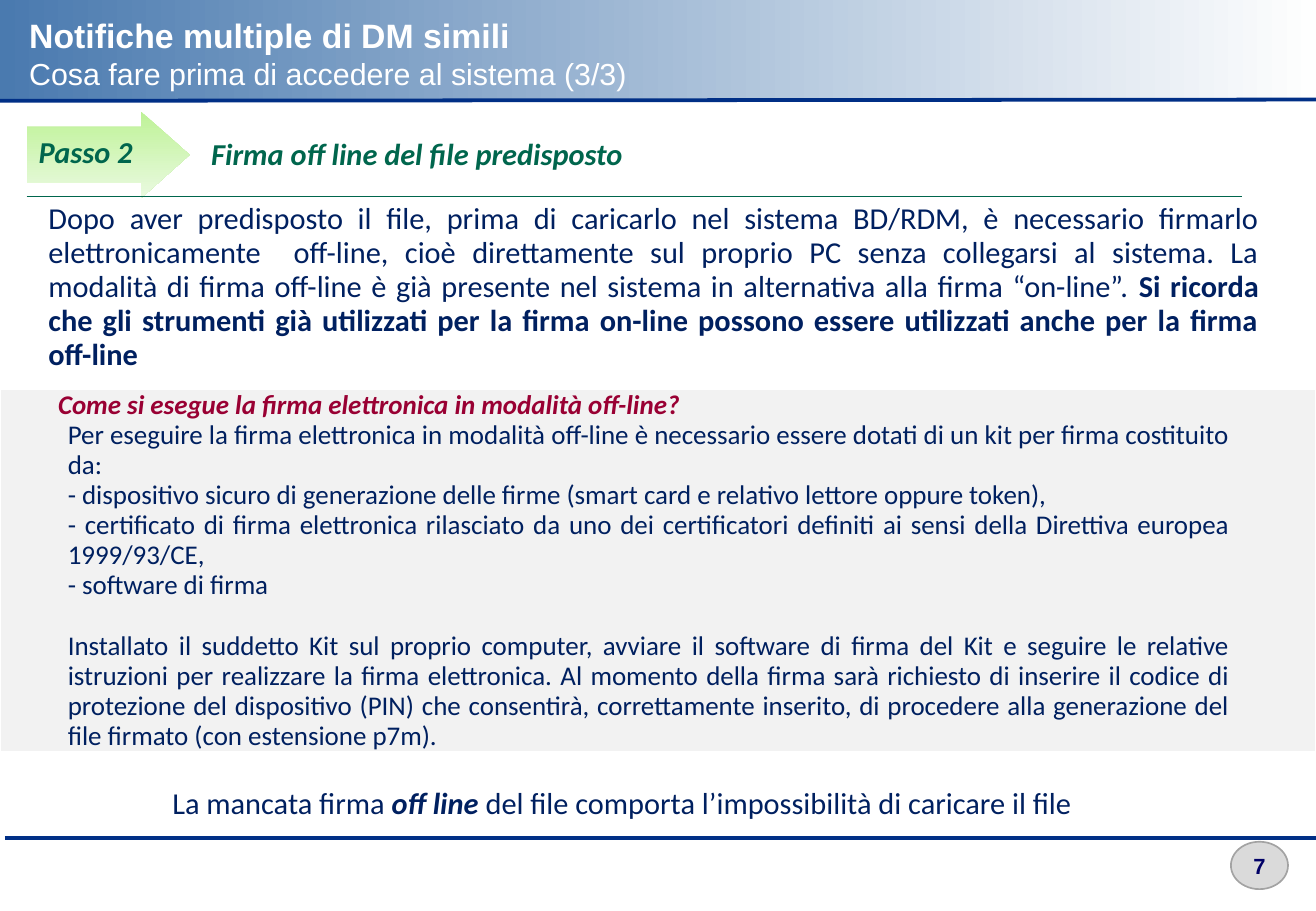
from lxml import etree
from pptx import Presentation
from pptx import util as u
from pptx.dml.color import RGBColor
from pptx.enum import shapes, text
from pptx.oxml.ns import qn

COLORS = {
    "white": "FFFFFF",
    "header_start": "4A7AAF",
    "header_end": "FEFEFE",
    "rule": "002F86",
    "panel": "F2F2F2",
    "badge": "DADADA",
    "badge_edge": "A3A3A3",
    "number": "000066",
    "arrow_top": "BEF297",
    "arrow_bottom": "EAFAE0",
    "step": "00664D",
    "body": "002060",
    "question": "990033",
}
JUSTIFY = text.PP_ALIGN.JUSTIFY
LEFT = text.PP_ALIGN.LEFT
CENTER = text.PP_ALIGN.CENTER


def rgb(name):
    return RGBColor.from_string(COLORS[name])


class NoticeSlide:
    def __init__(self, deck):
        self.slide = deck.slides.add_slide(deck.slide_layouts[5])
        self.shapes = self.slide.shapes

    def style(self, run, color, size, bold=False, italic=False, font="Calibri"):
        run.font.name = font
        run.font.size = u.Pt(size)
        run.font.bold = bold
        run.font.italic = italic
        run.font.color.rgb = rgb(color)

    def shape(self, kind, box, fill, edge=None, angle=0):
        shape = self.shapes.add_shape(kind, *map(u.Inches, box))
        shape.shadow.inherit = False
        if isinstance(fill, tuple):
            shape.fill.gradient()
            shape.fill.gradient_angle = angle
            for stop, name, position in zip(shape.fill.gradient_stops, fill, (0, 1)):
                stop.color.rgb = rgb(name)
                stop.position = position
        else:
            shape.fill.solid()
            shape.fill.fore_color.rgb = rgb(fill)
        if edge:
            shape.line.color.rgb = rgb(edge)
            shape.line.width = u.Pt(1)
        else:
            shape.line.fill.background()
        return shape

    def line(self, start, end, color, width):
        line = self.shapes.add_connector(
            shapes.MSO_CONNECTOR.STRAIGHT, *map(u.Inches, start + end))
        line.line.color.rgb = rgb(color)
        line.line.width = u.Pt(width)
        etree.SubElement(line._element.spPr, qn("a:effectLst"))

    def text(self, box, paragraphs, color, size, align=JUSTIFY, spacing=0.93):
        frame = self.shapes.add_textbox(*map(u.Inches, box)).text_frame
        frame.word_wrap = True
        for index, parts in enumerate(paragraphs):
            paragraph = frame.add_paragraph() if index else frame.paragraphs[0]
            paragraph.alignment = align
            paragraph.line_spacing = spacing
            for words, bold, italic in parts:
                run = paragraph.add_run()
                run.text = words
                self.style(run, color, size, bold, italic)
        return frame

    def title(self, box, heading, subheading):
        title = self.shapes.title
        self.shapes._spTree.append(title._element)
        title.left, title.top, title.width, title.height = map(u.Inches, box)
        frame = title.text_frame
        frame.text = f"{heading}\n{subheading}"
        frame.word_wrap = True
        frame.auto_size = text.MSO_AUTO_SIZE.NONE
        frame.vertical_anchor = text.MSO_ANCHOR.MIDDLE
        for paragraph, size, bold in zip(frame.paragraphs, (20, 18), (True, False)):
            paragraph.alignment = LEFT
            self.style(paragraph.runs[0], "white", size, bold, font="Arial")

    def page_number(self, box, number):
        badge = self.shape(shapes.MSO_SHAPE.OVAL, box, "badge", "badge_edge")
        frame = badge.text_frame
        frame.margin_left = frame.margin_right = 0
        frame.margin_top = frame.margin_bottom = 0
        frame.vertical_anchor = text.MSO_ANCHOR.MIDDLE
        frame.text = number
        frame.paragraphs[0].alignment = CENTER
        self.style(frame.paragraphs[0].runs[0], "number", 13, True, font="Arial")


def main():
    deck = Presentation()
    deck.slide_width, deck.slide_height = u.Inches(10.83), u.Inches(7.5)
    notice = NoticeSlide(deck)

    notice.shape(shapes.MSO_SHAPE.RECTANGLE, (0, 0, 10.83, 0.83),
                 ("header_start", "header_end"))
    notice.page_number((10.13, 6.93, 0.47, 0.39), "7")
    notice.line((0.04, 6.9), (10.83, 6.9), "rule", 2.25)
    notice.line((0, 0.83), (10.83, 0.82), "rule", 2.25)
    notice.title((0.14, 0.21, 9.06, 0.46), "Notifiche multiple di DM simili",
                 "Cosa fare prima di accedere al sistema (3/3)")

    notice.shape(shapes.MSO_SHAPE.RECTANGLE, (0, 3.2, 10.83, 2.99), "panel", "white")
    step_arrow = notice.shape(shapes.MSO_SHAPE.RIGHT_ARROW, (0.22, 0.92, 1.34, 0.71),
                              ("arrow_top", "arrow_bottom"), angle=270)
    step_arrow.adjustments[0] = 0.65
    step_arrow.adjustments[1] = 0.56
    notice.line((0.22, 1.62), (10.22, 1.62), "step", 0.75)

    notice.text((0.22, 1.07, 1.18, 0.38), [[("Passo 2", True, True)]], "step", 18, LEFT)
    notice.text((1.64, 1.06, 4.47, 0.4),
                [[("Firma off line del file predisposto", True, True)]],
                "step", 18, spacing=1.0)
    notice.text((0.3, 1.62, 10.16, 1.51), [[
        ("Dopo aver predisposto il file, prima di caricarlo nel sistema BD/RDM, è "
         "necessario firmarlo elettronicamente  off-line, cioè direttamente sul proprio "
         "PC senza collegarsi al sistema. La modalità di firma off-line è già presente "
         "nel sistema in alternativa alla firma “on-line”. ", False, False),
        ("Si ricorda che gli strumenti già utilizzati per la firma on-line possono "
         "essere utilizzati anche per la firma off-line", True, False),
    ]], "body", 18)

    notice.text((0.38, 3.14, 5.41, 0.37),
                [[("Come si esegue la firma elettronica in modalità off-line?", True, True)]],
                "question", 16, LEFT, 1.0)
    instructions = (
        "Per eseguire la firma elettronica in modalità off-line è necessario essere "
        "dotati di un kit per firma costituito da:",
        "- dispositivo sicuro di generazione delle firme (smart card e relativo lettore "
        "oppure token),",
        "- certificato di firma elettronica rilasciato da uno dei certificatori definiti "
        "ai sensi della Direttiva europea 1999/93/CE,",
        "- software di firma",
        "Installato il suddetto Kit sul proprio computer, avviare il software di firma "
        "del Kit e seguire le relative istruzioni per realizzare la firma elettronica. "
        "Al momento della firma sarà richiesto di inserire il codice di protezione del "
        "dispositivo (PIN) che consentirà, correttamente inserito, di procedere alla "
        "generazione del file firmato (con estensione p7m).",
    )
    procedure = notice.text((0.46, 3.41, 9.76, 2.86),
                            [[(words, False, False)] for words in instructions], "body", 16)
    procedure.paragraphs[-1].space_before = u.Pt(18)

    notice.text((1.32, 6.43, 9.4, 0.38), [[
        ("La mancata firma ", False, False),
        ("off line ", True, True),
        ("del file comporta l’impossibilità di caricare il file", False, False),
    ]], "body", 18)

    deck.save("out.pptx")


if __name__ == "__main__":
    main()
